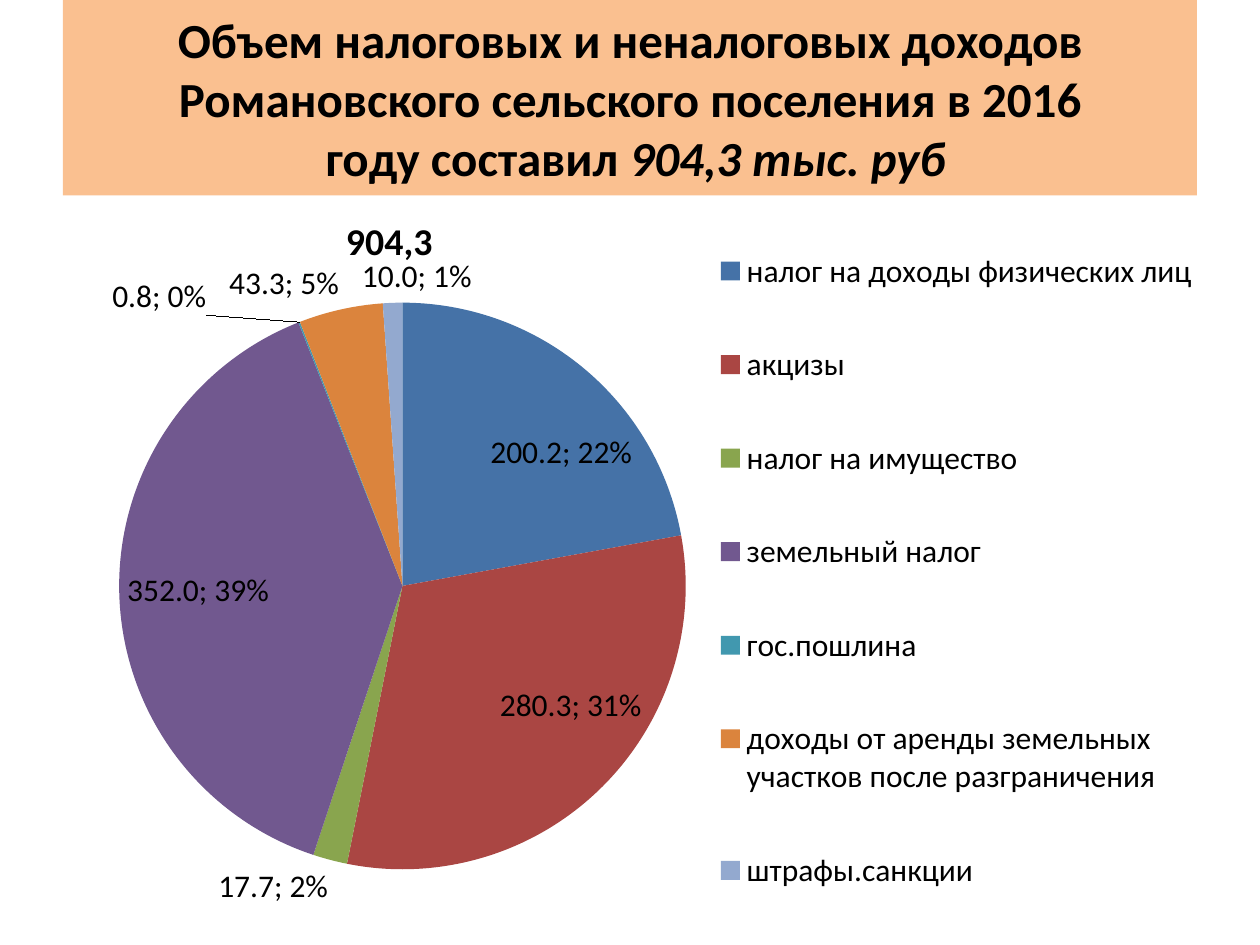
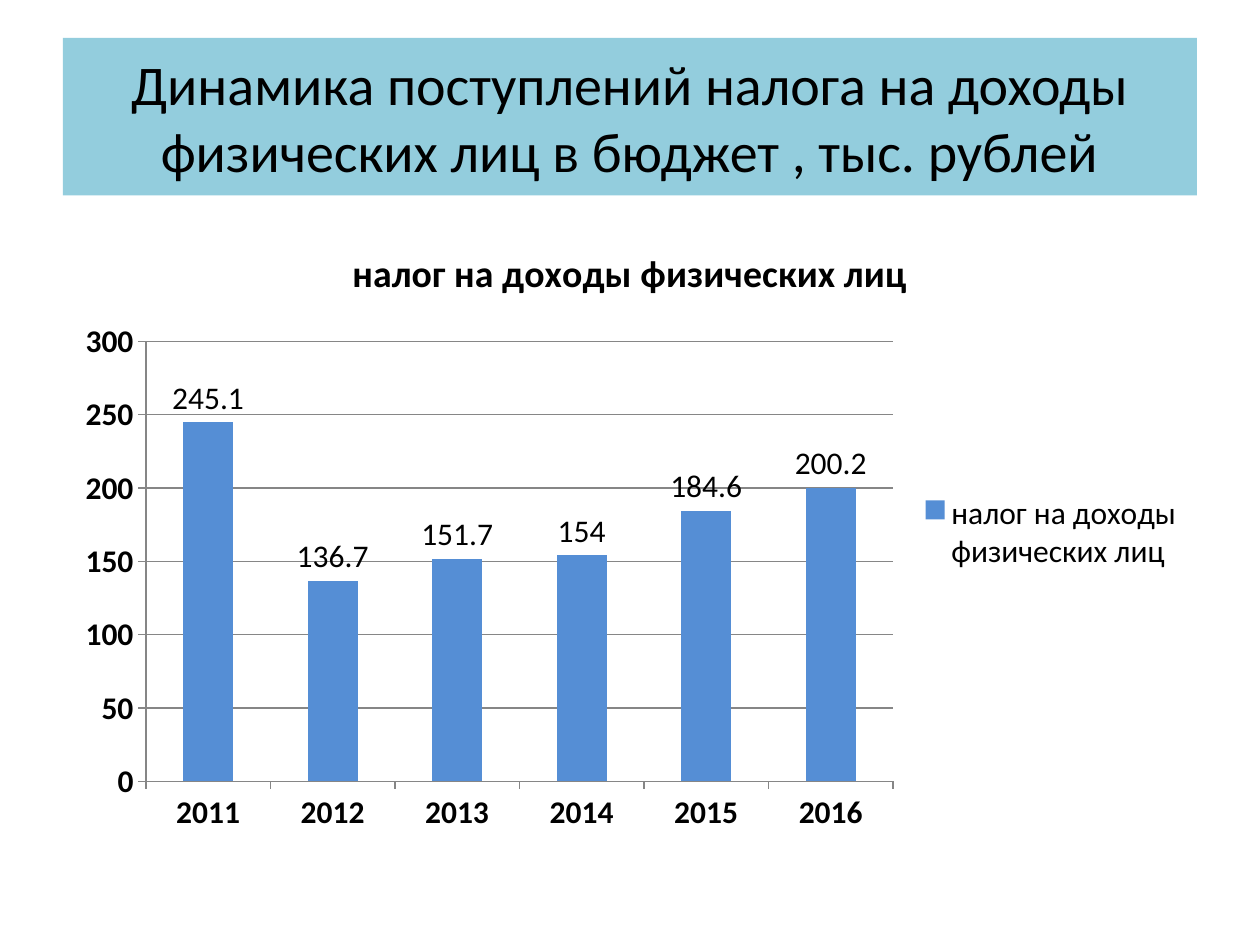
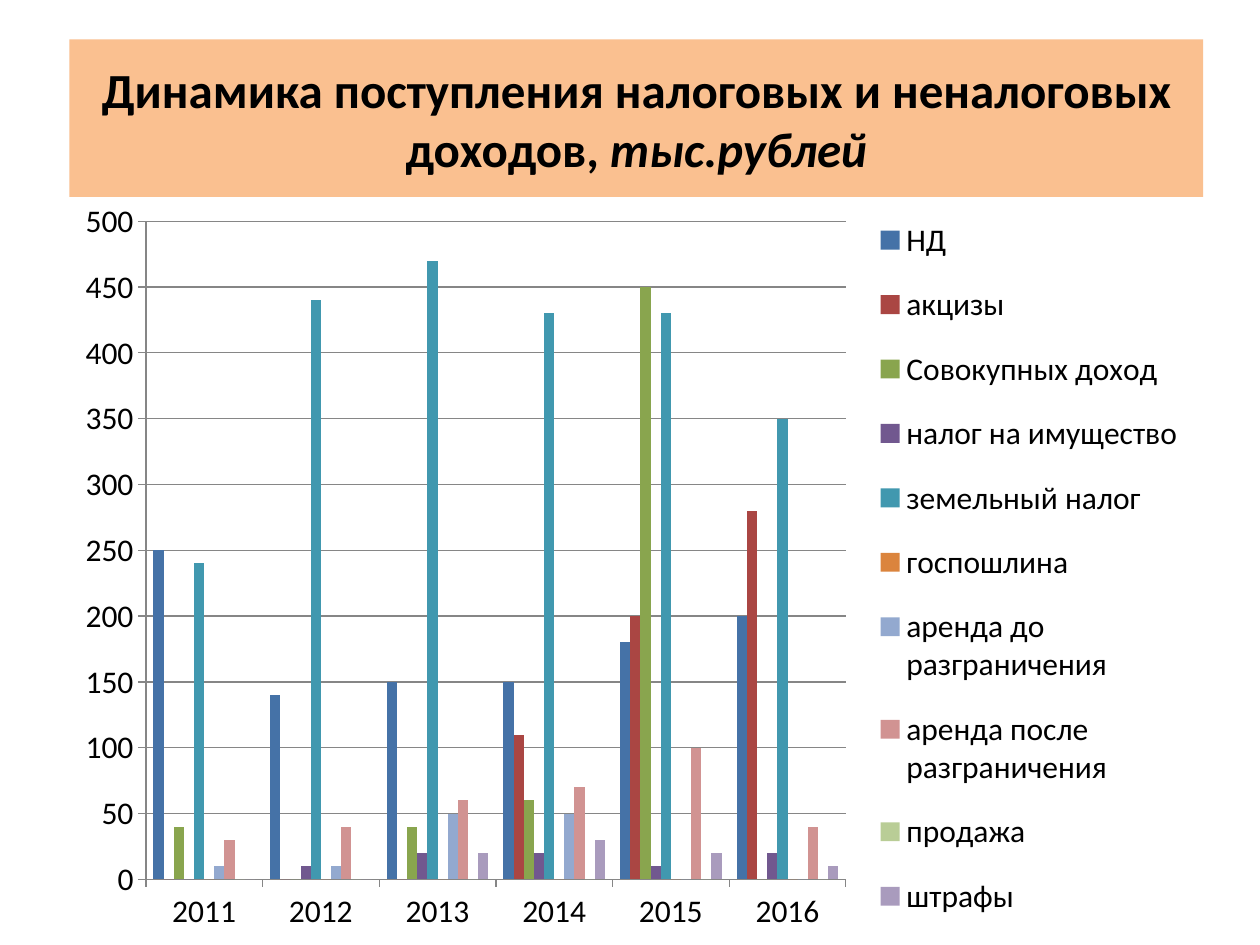
import pptx
import pptx.util
import pptx.chart.data
import pptx.dml.color
import pptx.enum.chart
import pptx.enum.shapes
import pptx.enum.text
import pptx.oxml
import pptx.oxml.ns

Pt = pptx.util.Pt
qn = pptx.oxml.ns.qn
XL = pptx.enum.chart
CHART_NS = pptx.oxml.ns.nsdecls("c")

FONT = "Calibri"
BLACK, GRID, PEACH, AQUA = "000000", "868686", "FAC090", "93CDDD"
PALETTE = ["4572A7", "AA4643", "89A54E", "71588F", "4198AF",
           "DB843D", "93A9CF", "D19392", "B9CD96", "A99BBD"]
YEARS = ["2011", "2012", "2013", "2014", "2015", "2016"]
INCOME_TAX = "налог на доходы физических лиц"

# Content: every box is left, top, width, height on the slide, in points
SLIDES = [
    dict(
        title=("Объем налоговых и неналоговых доходов Романовского сельского "
               "поселения в 2016\v году составил ", "904,3 тыс. руб"),
        title_box=(36, 0, 648, 111.6), band=PEACH, size=28, bold=True,
        kind=XL.XL_CHART_TYPE.PIE, chart_box=(39.6, 112.3, 652.3, 427.7),
        categories=[INCOME_TAX, "акцизы", "налог на имущество", "земельный налог",
                    "гос.пошлина",
                    "доходы от аренды земельных участков после разграничения",
                    "штрафы.санкции"],
        series=[("904,3", [200.2, 280.3, 17.7, 352, 0.8, 43.3, 10])],
        number_format="0.0", colors=PALETTE, chart_title="904,3", labels=True,
        layouts={"plotArea": (53.3, 173, 353.5, 323.8),
                 "legend": (406.3, 112.3, 280.5, 427.7),
                 "title": (193.8, 118.3)},
    ),
    dict(
        title=("Динамика поступлений налога на доходы физических лиц "
               "в бюджет , тыс. рублей", ""),
        title_box=(36, 21.6, 648, 90), band=AQUA, size=32, bold=False,
        kind=XL.XL_CHART_TYPE.COLUMN_CLUSTERED, chart_box=(36, 126, 648, 356.4),
        categories=YEARS,
        series=[(INCOME_TAX, [245.1, 136.7, 151.7, 154, 184.6, 200.2])],
        number_format="General", colors=["558ED5"], chart_title=INCOME_TAX,
        labels=True, bold_axes=True,
        layouts={"plotArea": (83.4, 195.1, 426.9, 251.4)},
    ),
    dict(
        title=("Динамика поступления налоговых и неналоговых доходов, ",
               "тыс.рублей"),
        title_box=(39.6, 22.5, 648, 90), band=PEACH, size=28, bold=True,
        kind=XL.XL_CHART_TYPE.COLUMN_CLUSTERED, chart_box=(36, 106.6, 648, 433.4),
        categories=YEARS,
        series=[
            ("НД", [250, 140, 150, 150, 180, 200]),
            ("акцизы", [0, 0, 0, 110, 200, 280]),
            ("Совокупных доход", [40, 0, 40, 60, 450, 0]),
            ("налог на имущество", [0, 10, 20, 20, 10, 20]),
            ("земельный налог", [240, 440, 470, 430, 430, 350]),
            ("госпошлина", [0, 0, 0, 0, 0, 0]),
            ("аренда до разграничения", [10, 10, 50, 50, 0, 0]),
            ("аренда после разграничения", [30, 40, 60, 70, 100, 40]),
            ("продажа", [0, 0, 0, 0, 0, 0]),
            ("штрафы", [0, 0, 20, 30, 20, 10]),
        ],
        number_format="General", colors=PALETTE, chart_title=None,
        labels=False, bold_axes=False,
        layouts={"plotArea": (83.4, 126.4, 400, 376.2),
                 "legend": (497.3, 111.3, 181.4, 427)},
    ),
]


def rgb(color):
    return pptx.dml.color.RGBColor.from_string(color)


def paint(fill, color):
    fill.solid()
    fill.fore_color.rgb = rgb(color)


def style_font(font, size, bold=False):
    font.name, font.size, font.bold = FONT, Pt(size), bold
    font.color.rgb = rgb(BLACK)


def chart_xml(tag, value):
    element = pptx.oxml.parse_xml(f"<c:{tag} {CHART_NS}/>")
    element.set("val", str(value))
    return element


def set_layout(chart, part_name, box, chart_box):
    """Place the plot area, legend or title inside the chart."""
    left, top, width, height = chart_box
    offsets = (left, top, 0, 0)
    scales = (width, height, width, height)
    part = next(chart.element.iter(qn("c:" + part_name)))
    for old in part.findall(qn("c:layout")):
        part.remove(old)
    layout = pptx.oxml.parse_xml(
        f"<c:layout {CHART_NS}><c:manualLayout/></c:layout>")
    if part_name == "plotArea":
        layout[0].append(chart_xml("layoutTarget", "inner"))
    for tag in ("xMode", "yMode"):
        layout[0].append(chart_xml(tag, "edge"))
    for tag, value, offset, scale in zip("xywh", box, offsets, scales):
        layout[0].append(chart_xml(tag, round((value - offset) / scale, 4)))
    part.insert(0 if part_name == "plotArea" else 1, layout)


def add_title(slide, content):
    shape = slide.shapes.add_shape(pptx.enum.shapes.MSO_SHAPE.RECTANGLE,
                                   *map(Pt, content["title_box"]))
    shape.shadow.inherit = False
    paint(shape.fill, content["band"])
    shape.line.fill.background()
    text_frame = shape.text_frame
    text_frame.word_wrap = True
    text_frame.vertical_anchor = pptx.enum.text.MSO_ANCHOR.MIDDLE
    paragraph = text_frame.paragraphs[0]
    lead, emphasis = content["title"]
    paragraph.text = lead
    paragraph.alignment = pptx.enum.text.PP_ALIGN.CENTER
    if emphasis:
        run = paragraph.add_run()
        run.text = emphasis
        run.font.italic = True
    for run in paragraph.runs:
        style_font(run.font, content["size"], content["bold"])


def add_labels(chart, is_pie):
    labels = chart.plots[0].series[0].data_labels
    style_font(labels.font, 18)
    labels.show_value = True
    labels.position = XL.XL_LABEL_POSITION.OUTSIDE_END
    if is_pie:
        labels.show_percentage = True
        labels.position = XL.XL_LABEL_POSITION.BEST_FIT
        last_switch = next(chart.element.iter(qn("c:showBubbleSize")))
        last_switch.addnext(pptx.oxml.parse_xml(
            f"<c:separator {CHART_NS}>; </c:separator>"))


def style_axes(chart, bold):
    for axis in (chart.category_axis, chart.value_axis):
        style_font(axis.tick_labels.font, 18, bold)
        axis.major_tick_mark = XL.XL_TICK_MARK.OUTSIDE
        axis.minor_tick_mark = XL.XL_TICK_MARK.NONE
        axis.format.line.color.rgb = rgb(GRID)
    chart.value_axis.has_major_gridlines = True
    chart.value_axis.major_gridlines.format.line.color.rgb = rgb(GRID)


def add_chart(slide, content):
    data = pptx.chart.data.CategoryChartData(content["number_format"])
    data.categories = content["categories"]
    for name, values in content["series"]:
        data.add_series(name, values)
    chart = slide.shapes.add_chart(
        content["kind"], *map(Pt, content["chart_box"]), data).chart
    style_font(chart.font, 18)
    is_pie = content["kind"] == XL.XL_CHART_TYPE.PIE
    plot = chart.plots[0]
    plot.vary_by_categories = is_pie

    # Legend and chart title
    chart.has_legend = True
    chart.legend.position = XL.XL_LEGEND_POSITION.RIGHT
    chart.legend.include_in_layout = False
    style_font(chart.legend.font, 18)
    chart.has_title = bool(content["chart_title"])
    if chart.has_title:
        paragraph = chart.chart_title.text_frame.paragraphs[0]
        paragraph.text = content["chart_title"]
        style_font(paragraph.runs[0].font, 21.6, True)

    # Colours and labels
    if is_pie:
        points = plot.series[0].points
        parts = [points[i] for i in range(len(content["categories"]))]
    else:
        parts = list(plot.series)
        plot.gap_width = 150
        style_axes(chart, content["bold_axes"])
    for part, color in zip(parts, content["colors"]):
        paint(part.format.fill, color)
    if content["labels"]:
        add_labels(chart, is_pie)
    for part_name, box in content["layouts"].items():
        set_layout(chart, part_name, box, content["chart_box"])


def main():
    presentation = pptx.Presentation()
    presentation.slide_width, presentation.slide_height = Pt(720), Pt(540)
    for content in SLIDES:
        slide = presentation.slides.add_slide(presentation.slide_layouts[6])
        add_title(slide, content)
        add_chart(slide, content)
    presentation.save("out.pptx")


if __name__ == "__main__":
    main()
